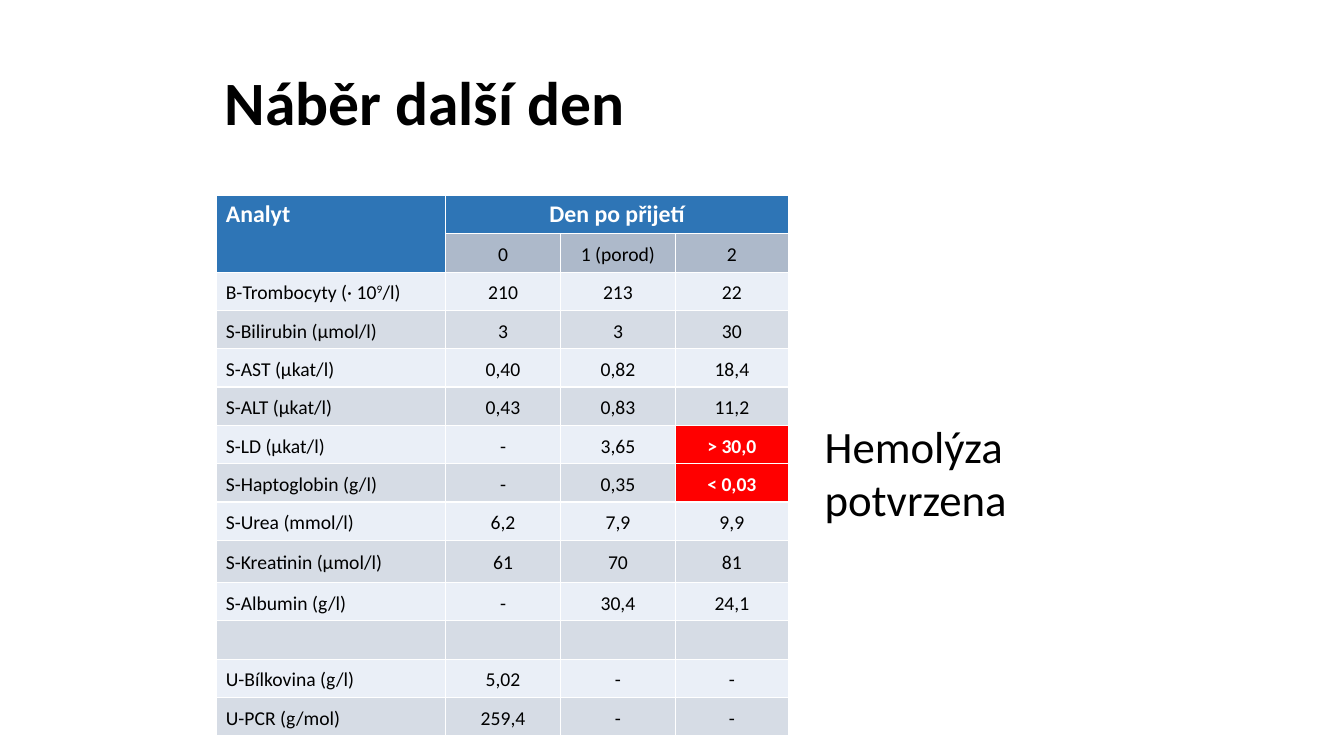
import pptx
import pptx.util
import pptx.dml.color
import pptx.enum.text
import pptx.oxml
import pptx.oxml.ns

Inches, Pt = pptx.util.Inches, pptx.util.Pt
RGBColor = pptx.dml.color.RGBColor
PP_ALIGN, MSO_ANCHOR = pptx.enum.text.PP_ALIGN, pptx.enum.text.MSO_ANCHOR

BLACK = RGBColor(0x00, 0x00, 0x00)
WHITE = RGBColor(0xFF, 0xFF, 0xFF)
HEADER_BLUE = RGBColor(0x2E, 0x75, 0xB6)
DAY_GREY = RGBColor(0xAD, 0xB9, 0xCA)
BAND_COLORS = [RGBColor(0xEA, 0xEF, 0xF7), RGBColor(0xD6, 0xDC, 0xE5)]
ALERT_RED = RGBColor(0xFF, 0x00, 0x00)
FONT = "Calibri"

HEADER_ROWS = 2
KREATININ_ROW = 9
COLUMN_WIDTHS = [2.27, 1.14, 1.14, 1.12]
ROWS = [
    ["Analyt", "Den po přijetí", "", ""],
    ["", "0", "1 (porod)", "2"],
    ["B-Trombocyty (· 10^9^/l)", "210", "213", "22"],
    ["S-Bilirubin (µmol/l)", "3", "3", "30"],
    ["S-AST (µkat/l)", "0,40", "0,82", "18,4"],
    ["S-ALT (µkat/l)", "0,43", "0,83", "11,2"],
    ["S-LD (µkat/l)", "-", "3,65", "> 30,0"],
    ["S-Haptoglobin (g/l)", "-", "0,35", "< 0,03"],
    ["S-Urea (mmol/l)", "6,2", "7,9", "9,9"],
    ["S-Kreatinin (µmol/l)", "61", "70", "81"],
    ["S-Albumin (g/l)", "-", "30,4", "24,1"],
    ["", "", "", ""],
    ["U-Bílkovina (g/l)", "5,02", "-", "-"],
    ["U-PCR (g/mol)", "259,4", "-", "-"],
]


def add_text(slide, box, text, size, bold, anchor):
    shape = slide.shapes.add_textbox(*[Inches(length) for length in box])
    text_frame = shape.text_frame
    text_frame.word_wrap = True
    text_frame.vertical_anchor = anchor
    text_frame.text = text
    paragraph = text_frame.paragraphs[0]
    format_run(paragraph.runs[0], size, bold, BLACK)
    return paragraph


def format_run(run, size, bold, color):
    run.font.name = FONT
    run.font.size = Pt(size)
    run.font.bold = bold
    run.font.color.rgb = color


presentation = pptx.Presentation()
presentation.slide_width = Inches(13.33)
presentation.slide_height = Inches(7.5)
slide = presentation.slides.add_slide(presentation.slide_layouts[6])

# Title
title = add_text(slide, (2.13, 0.48, 9.03, 1.14), "Náběr další den", 44, True, MSO_ANCHOR.MIDDLE)
title.line_spacing = 0.9

# Table grid
table = slide.shapes.add_table(
    len(ROWS), len(COLUMN_WIDTHS), Inches(2.15), Inches(1.94), Inches(5.67), Inches(5.35)
).table
for column, width in zip(table.columns, COLUMN_WIDTHS):
    column.width = Inches(width)
for row_index, row in enumerate(table.rows):
    row.height = Inches(0.42 if row_index == KREATININ_ROW else 0.38)
table.cell(0, 0).merge(table.cell(1, 0))
table.cell(0, 1).merge(table.cell(0, 3))

# Table cells
for row_index, values in enumerate(ROWS):
    for column_index, value in enumerate(values):
        cell = table.cell(row_index, column_index)
        is_label = column_index == 0
        is_alert = value.startswith((">", "<"))
        is_header = row_index == 0 or (is_label and row_index < HEADER_ROWS)

        # White borders come before the fill in the cell properties
        properties = cell._tc.get_or_add_tcPr()
        for side in ("lnL", "lnR", "lnT", "lnB"):
            properties.append(pptx.oxml.parse_xml(
                f'<a:{side} {pptx.oxml.ns.nsdecls("a")} w="12700"><a:solidFill>'
                f'<a:srgbClr val="{WHITE}"/></a:solidFill></a:{side}>'
            ))
        cell.fill.solid()
        if is_header:
            cell.fill.fore_color.rgb = HEADER_BLUE
        elif row_index < HEADER_ROWS:
            cell.fill.fore_color.rgb = DAY_GREY
        else:
            cell.fill.fore_color.rgb = ALERT_RED if is_alert else BAND_COLORS[row_index % 2]

        cell.margin_left = Inches(0.09 if is_label else 0)
        cell.margin_right = cell.margin_top = cell.margin_bottom = 0
        cell.vertical_anchor = MSO_ANCHOR.TOP if is_header else MSO_ANCHOR.MIDDLE
        if not value:
            continue

        paragraph = cell.text_frame.paragraphs[0]
        paragraph.alignment = PP_ALIGN.LEFT if is_label else PP_ALIGN.CENTER
        paragraph.line_spacing = 1.15
        paragraph.space_before = Pt(2 if is_header or is_label else 1)
        paragraph.space_after = Pt(2)
        # Text between carets is superscript
        for part_index, part in enumerate(value.split("^")):
            run = paragraph.add_run()
            run.text = part
            format_run(run, 17 if is_header else 14, is_header or is_alert,
                       WHITE if is_header or is_alert else BLACK)
            if part_index % 2:
                run._r.get_or_add_rPr().set("baseline", "30000")

# Conclusion beside the table
add_text(slide, (8.08, 4.1, 3.31, 1.18), "Hemolýza potvrzena", 32, False, MSO_ANCHOR.TOP)

presentation.save("out.pptx")
